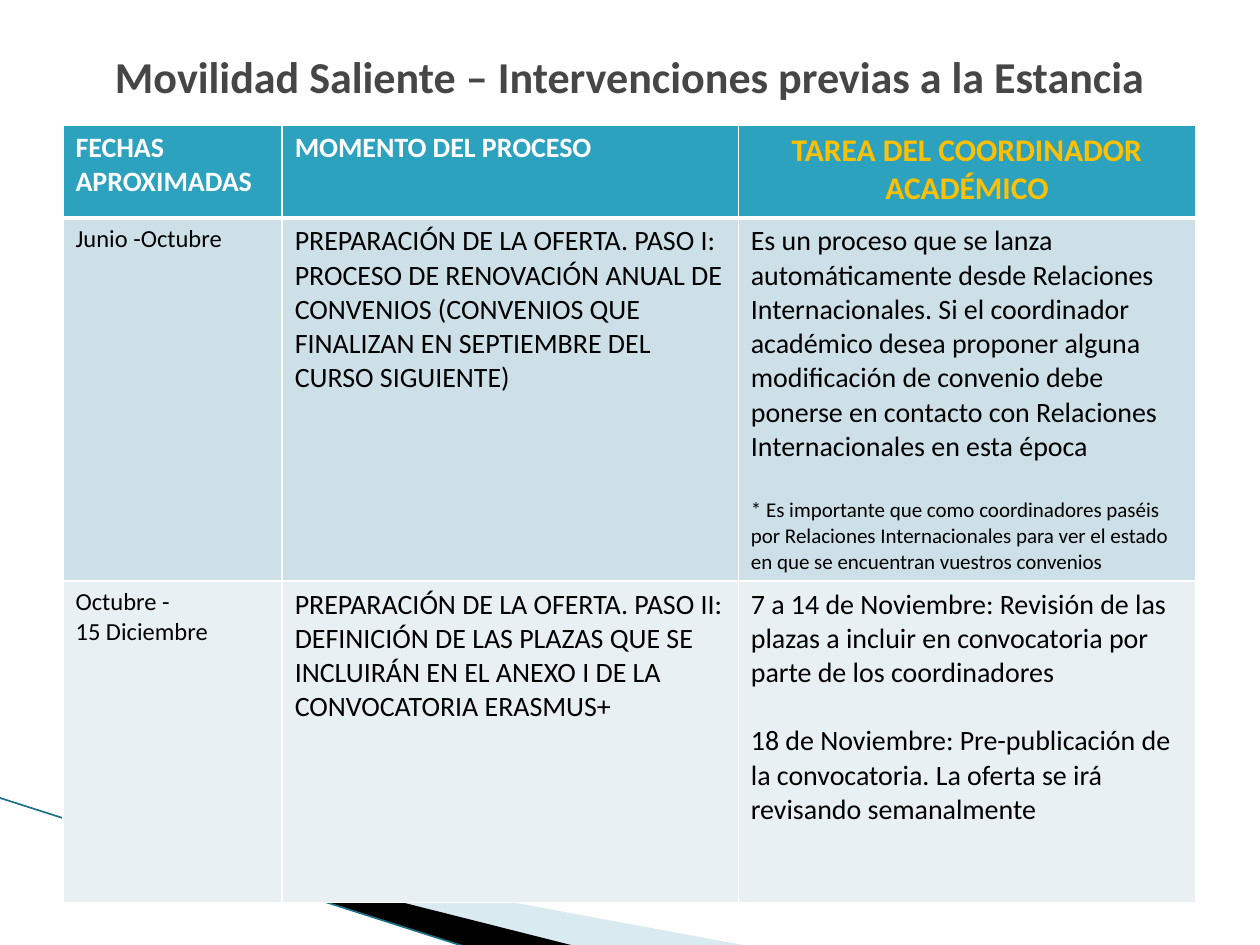
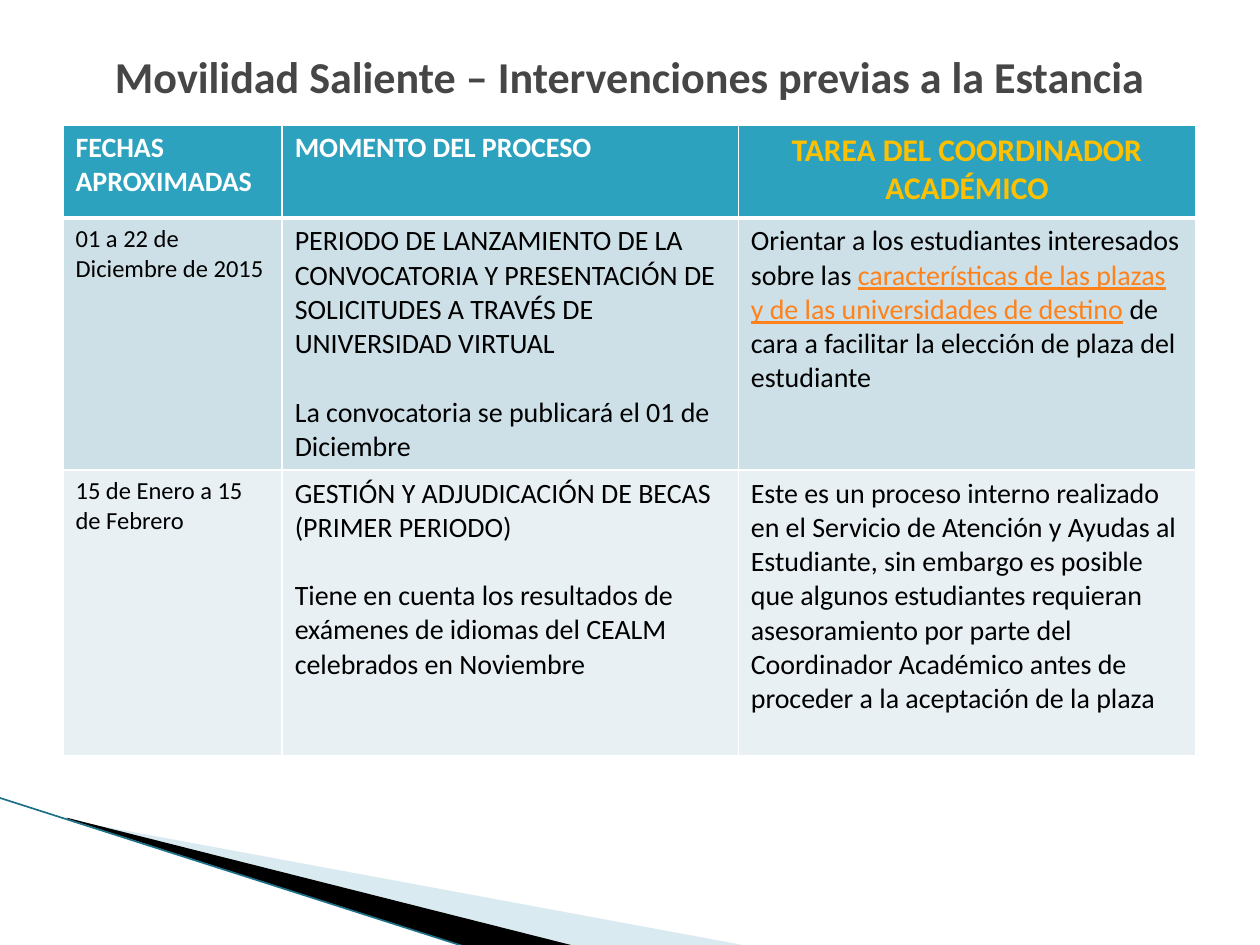
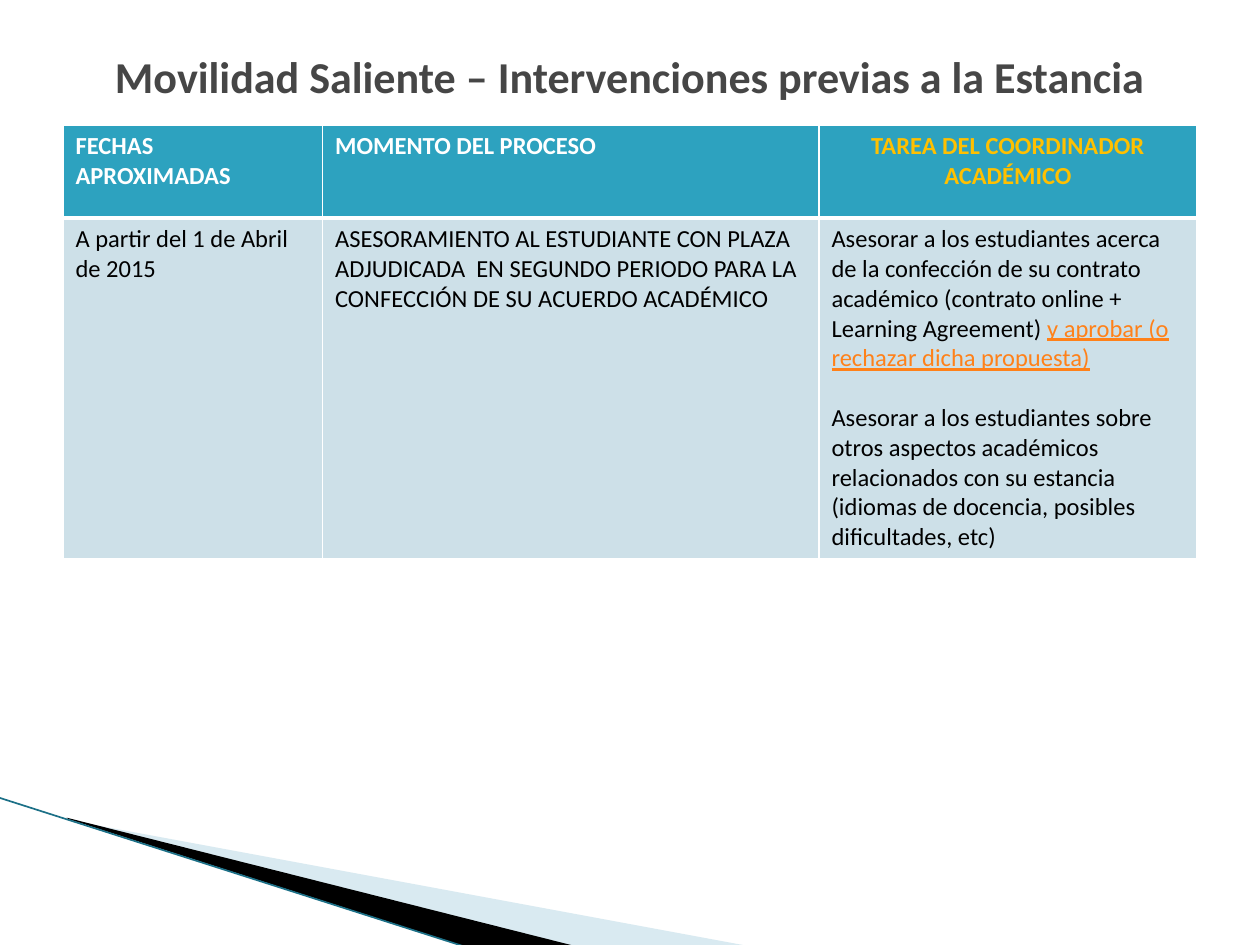
import pptx
import pptx.util
import pptx.dml.color
import pptx.enum.shapes
import pptx.enum.text
import pptx.oxml
import pptx.oxml.ns

Inches = pptx.util.Inches
Pt = pptx.util.Pt
RGBColor = pptx.dml.color.RGBColor
CENTER = pptx.enum.text.PP_ALIGN.CENTER

FONT = "Calibri"
WHITE = RGBColor(0xFF, 0xFF, 0xFF)
BLACK = RGBColor(0, 0, 0)
GRAY = RGBColor(0x46, 0x46, 0x46)
GOLD = RGBColor(0xFF, 0xC0, 0x00)
ORANGE = RGBColor(0xFF, 0x81, 0x19)
TEAL = RGBColor(0x2D, 0xA2, 0xBF)
DARK_TEAL = RGBColor(0x1C, 0x70, 0x87)
PALE_BLUE = RGBColor(0xA0, 0xCB, 0xDC)
ROW_FILLS = [RGBColor(0xCD, 0xE0, 0xE8), RGBColor(0xE8, 0xF0, 0xF4)]

TITLE = "Movilidad Saliente – Intervenciones previas a la Estancia"
HEADINGS = ["FECHAS APROXIMADAS", "MOMENTO DEL PROCESO", "TAREA DEL COORDINADOR ACADÉMICO"]
HEADER_HEIGHT = 0.74
PALE_WEDGE = [(0.55, 6.51), (5.95, 7.51), (4.56, 7.51), (0.55, 6.5)]
BLACK_WEDGE = [(0.53, 6.49), (4.57, 7.51), (3.72, 7.52), (0.54, 6.5)]

# Each cell lists paragraphs as (size, space before, spans); a span is (text, colour).
PAGES = [
    {
        "columns": [1.74, 3.62, 3.63],
        "heading_sizes": [16, 16, 18],
        "row_heights": [2.88, 2.55],
        "rows": [
            [
                [(14, 0, [("Junio -Octubre", BLACK)])],
                [(16, 0, [("PREPARACIÓN DE LA OFERTA. PASO I: PROCESO DE RENOVACIÓN ANUAL DE CONVENIOS "
                           "(CONVENIOS QUE FINALIZAN EN SEPTIEMBRE DEL CURSO SIGUIENTE)", BLACK)])],
                [(16, 0, [("Es un proceso que se lanza automáticamente desde Relaciones Internacionales. "
                           "Si el coordinador académico desea proponer alguna modificación de convenio debe "
                           "ponerse en contacto con Relaciones Internacionales en esta época", BLACK)]),
                 (12, 19.5, [("* Es importante que como coordinadores paséis por Relaciones Internacionales "
                              "para ver el estado en que se encuentran vuestros convenios", BLACK)])],
            ],
            [
                [(14, 0, [("Octubre -", BLACK)]), (14, 0, [("15 Diciembre", BLACK)])],
                [(16, 0, [("PREPARACIÓN DE LA OFERTA. PASO II: DEFINICIÓN DE LAS PLAZAS QUE SE INCLUIRÁN "
                           "EN EL ANEXO I DE LA CONVOCATORIA ERASMUS+", BLACK)])],
                [(16, 0, [("7 a 14 de Noviembre: Revisión de las plazas a incluir en convocatoria por parte "
                           "de los coordinadores", BLACK)]),
                 (16, 19.5, [("18 de Noviembre: Pre-publicación de la convocatoria. La oferta se irá "
                              "revisando semanalmente", BLACK)])],
            ],
        ],
    },
    {
        "columns": [1.74, 3.62, 3.63],
        "heading_sizes": [16, 16, 18],
        "row_heights": [2, 2.27],
        "rows": [
            [
                [(14, 0, [("01 a 22 de Diciembre de 2015", BLACK)])],
                [(16, 0, [("PERIODO DE LANZAMIENTO DE LA CONVOCATORIA Y PRESENTACIÓN DE SOLICITUDES A TRAVÉS "
                           "DE UNIVERSIDAD VIRTUAL", BLACK)]),
                 (16, 19.5, [("La convocatoria se publicará el 01 de Diciembre", BLACK)])],
                [(16, 0, [("Orientar a los estudiantes interesados sobre las ", BLACK),
                          ("características de las plazas y de las universidades de destino", ORANGE),
                          (" de cara a facilitar la elección de plaza del estudiante", BLACK)])],
            ],
            [
                [(14, 0, [("15 de Enero a 15 de Febrero", BLACK)])],
                [(16, 0, [("GESTIÓN Y ADJUDICACIÓN DE BECAS (PRIMER PERIODO)", BLACK)]),
                 (16, 19.5, [("Tiene en cuenta los resultados de exámenes de idiomas del CEALM celebrados en "
                              "Noviembre", BLACK)])],
                [(16, 0, [("Este es un proceso interno realizado en el Servicio de Atención y Ayudas al "
                           "Estudiante, sin embargo es posible que algunos estudiantes requieran "
                           "asesoramiento por parte del Coordinador Académico antes de proceder a la "
                           "aceptación de la plaza", BLACK)])],
            ],
        ],
    },
    {
        "columns": [2.06, 3.94, 3],
        "heading_sizes": [14, 14, 14],
        "row_heights": [2.7],
        "rows": [
            [
                [(14, 0, [("A partir del 1 de Abril de 2015", BLACK)])],
                [(14, 0, [("ASESORAMIENTO AL ESTUDIANTE CON PLAZA ADJUDICADA  EN SEGUNDO PERIODO PARA LA "
                           "CONFECCIÓN DE SU ACUERDO ACADÉMICO", BLACK)])],
                [(14, 0, [("Asesorar a los estudiantes acerca de la confección de su contrato académico "
                           "(contrato online + Learning Agreement) ", BLACK),
                          ("y aprobar (o rechazar dicha propuesta)", ORANGE)]),
                 (14, 17, [("Asesorar a los estudiantes sobre otros aspectos académicos relacionados con su "
                            "estancia (idiomas de docencia, posibles dificultades, etc)", BLACK)])],
            ],
        ],
    },
]


def add_span(para, text, size, color, bold=False):
    span = para.add_run()
    span.text = text
    span.font.name = FONT
    span.font.size = Pt(size)
    span.font.bold = bold
    span.font.color.rgb = color
    if color == ORANGE:
        span.font.underline = True


def add_wedge(page, points, color, opacity=100):
    corners = [(Inches(x), Inches(y)) for x, y in points]
    builder = page.shapes.build_freeform(*corners[0])
    builder.add_line_segments(corners[1:], close=True)
    wedge = builder.convert_to_shape()
    wedge.shadow.inherit = False
    wedge.fill.solid()
    wedge.fill.fore_color.rgb = color
    wedge.line.fill.background()
    if opacity < 100:
        fill_color = wedge.fill._xPr.find(".//" + pptx.oxml.ns.qn("a:srgbClr"))
        alpha = pptx.oxml.parse_xml(f'<a:alpha {pptx.oxml.ns.nsdecls("a")} val="{opacity * 1000}"/>')
        fill_color.append(alpha)


def add_corner(page):
    add_wedge(page, PALE_WEDGE, PALE_BLUE, 40)
    add_wedge(page, BLACK_WEDGE, BLACK)
    edge = page.shapes.add_connector(pptx.enum.shapes.MSO_CONNECTOR.STRAIGHT,
                                     Inches(-0.01), Inches(6.33), Inches(3.71), Inches(7.52))
    edge.line.color.rgb = DARK_TEAL
    edge.line.width = Pt(0.95)
    edge._element.spPr.append(pptx.oxml.parse_xml(f'<a:effectLst {pptx.oxml.ns.nsdecls("a")}/>'))


def add_title(page):
    box = page.shapes.add_textbox(Inches(0.5), Inches(0.3), Inches(9), Inches(0.61))
    frame = box.text_frame
    frame.word_wrap = True
    frame.vertical_anchor = pptx.enum.text.MSO_ANCHOR.MIDDLE
    para = frame.paragraphs[0]
    para.alignment = CENTER
    add_span(para, TITLE, 25.2, GRAY, True)


def style_cell(cell, color, borders):
    cell.fill.solid()
    cell.fill.fore_color.rgb = color
    properties = cell._tc.get_or_add_tcPr()
    for position, (side, width) in enumerate(borders.items()):
        border = pptx.oxml.parse_xml(
            f'<a:ln{side} {pptx.oxml.ns.nsdecls("a")} w="{Pt(width)}">'
            f'<a:solidFill><a:srgbClr val="{WHITE}"/></a:solidFill></a:ln{side}>')
        properties.insert(position, border)


def fill_heading(cell, text, size, color):
    style_cell(cell, TEAL, {"L": 1, "R": 1, "T": 1, "B": 3})
    para = cell.text_frame.paragraphs[0]
    if color == GOLD:
        para.alignment = CENTER
    add_span(para, text, size, color, True)


def fill_body(cell, paragraphs, color):
    style_cell(cell, color, {"L": 1, "R": 1, "B": 1})
    frame = cell.text_frame
    for index, (size, gap, spans) in enumerate(paragraphs):
        para = frame.add_paragraph() if index else frame.paragraphs[0]
        if gap:
            para.space_before = Pt(gap)
        for text, span_color in spans:
            add_span(para, text, size, span_color)


def add_schedule(page, content):
    heights = [HEADER_HEIGHT] + content["row_heights"]
    columns = content["columns"]
    table = page.shapes.add_table(len(heights), len(columns), Inches(0.5), Inches(0.99),
                                  Inches(sum(columns)), Inches(sum(heights))).table
    for column, width in zip(table.columns, columns):
        column.width = Inches(width)
    for row, height in zip(table.rows, heights):
        row.height = Inches(height)
    headings = zip(HEADINGS, content["heading_sizes"], [WHITE, WHITE, GOLD])
    for index, (text, size, color) in enumerate(headings):
        fill_heading(table.cell(0, index), text, size, color)
    for row_index, row in enumerate(content["rows"]):
        for index, paragraphs in enumerate(row):
            fill_body(table.cell(row_index + 1, index), paragraphs, ROW_FILLS[row_index % 2])


def main():
    deck = pptx.Presentation()
    deck.slide_width = Inches(10)
    deck.slide_height = Inches(7.5)
    for content in PAGES:
        page = deck.slides.add_slide(deck.slide_layouts[6])
        add_corner(page)
        add_schedule(page, content)
        add_title(page)
    deck.save("out.pptx")


if __name__ == "__main__":
    main()
